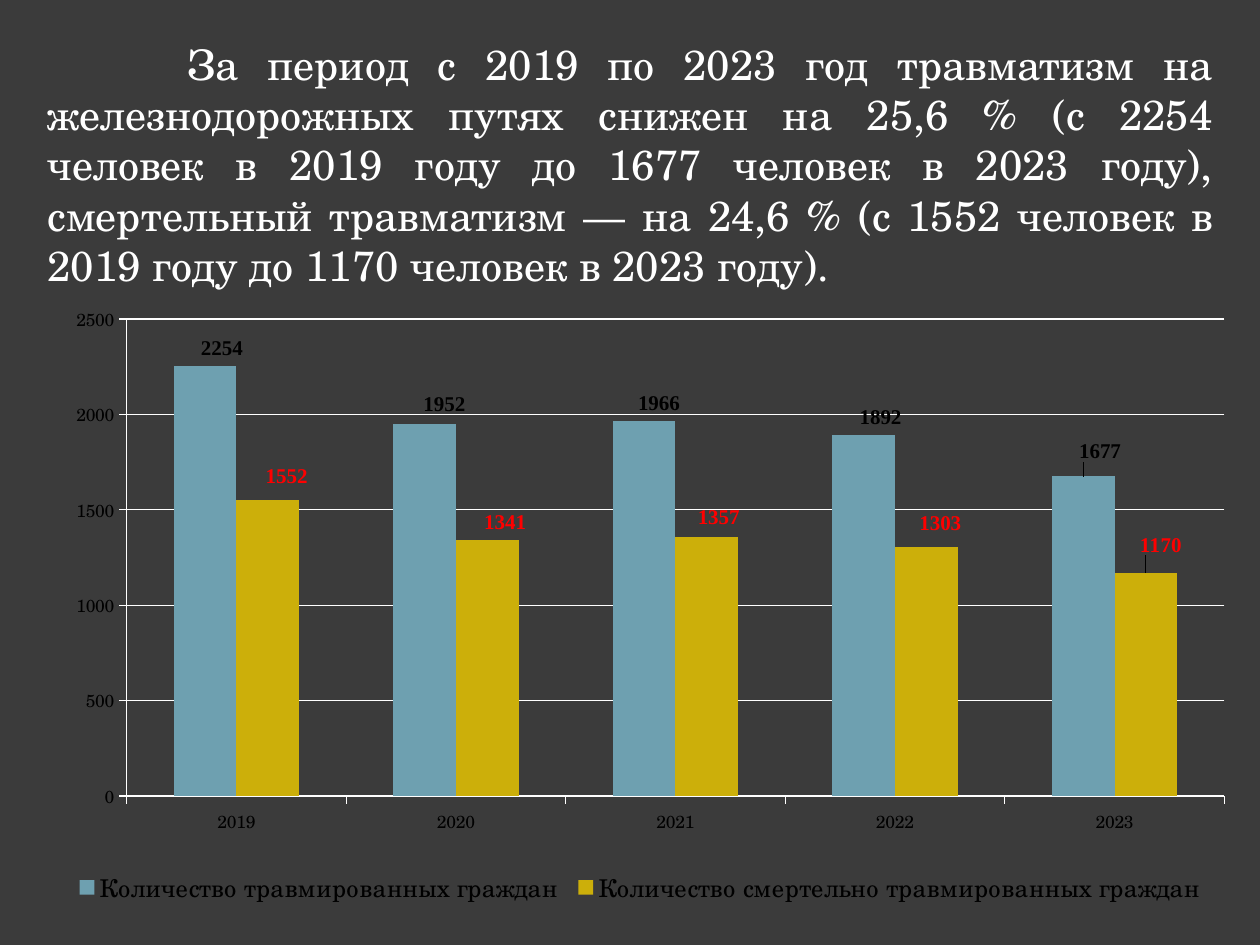
from dataclasses import dataclass

from lxml.etree import SubElement
from pptx import Presentation
from pptx.chart.data import CategoryChartData
from pptx.dml.color import RGBColor
from pptx.enum.chart import XL_CHART_TYPE as ChartType
from pptx.enum.chart import XL_LABEL_POSITION as LabelPos
from pptx.enum.chart import XL_LEGEND_POSITION as LegendPos
from pptx.enum.chart import XL_TICK_MARK as Tick
from pptx.enum.text import PP_ALIGN as Align
from pptx.oxml import parse_xml
from pptx.oxml.ns import nsdecls, qn
from pptx.util import Emu, Pt

PX_PER_INCH = 126
SERIF, LABEL_FONT = "TeX Gyre Schola", "Times New Roman"
WHITE, BLACK, RED, GREY = "FFFFFF", "000000", "FF0000", "3B3B3B"
CHART_W, CHART_H = 1181, 638


@dataclass
class Series:
    name: str
    values: list[int]
    fill: str
    label_color: str
    label_shifts: list[tuple[int, int]]  # px from the default place


YEARS = ["2019", "2020", "2021", "2022", "2023"]
SERIES = [
    Series("Количество травмированных граждан", [2254, 1952, 1966, 1892, 1677],
           "6EA0B0", BLACK, [(17, -2), (20, -3), (15, -2), (17, -2), (17, -9)]),
    Series("Количество смертельно травмированных граждан", [1552, 1341, 1357, 1303, 1170],
           "CCAF0A", RED, [(19, -8), (18, -2), (12, -4), (14, -8), (15, -12)]),
]
SUMMARY = ("За период с 2019 по 2023 год травматизм на железнодорожных путях снижен "
           "на 25,6 % (с 2254 человек в 2019 году до 1677 человек в 2023 году), "
           "смертельный травматизм — на 24,6 % (с 1552 человек в 2019 году "
           "до 1170 человек в 2023 году).")


def px(n: int) -> Emu:
    return Emu(round(n * 914400 / PX_PER_INCH))


def rgb(color: str) -> RGBColor:
    return RGBColor.from_string(color)


def set_font(font, size: int, color: str, name: str = SERIF, bold: bool = False) -> None:
    font.size, font.name, font.bold = Pt(size), name, bold
    font.color.rgb = rgb(color)


def add_text(slide, text: str, x: int, y: int, w: int, h: int, *, size: int,
             color: str, align=Align.LEFT, indent: int = 0) -> None:
    tf = slide.shapes.add_textbox(px(x), px(y), px(w), px(h)).text_frame
    tf.word_wrap = True
    p = tf.paragraphs[0]
    p.alignment = align
    p._p.get_or_add_pPr().set("indent", str(px(indent)))
    r = p.add_run()
    r.text = text
    set_font(r.font, size, color)


def set_layout(parent, index: int, **values) -> None:
    """Give a chart part a manual layout, as the child at the given index."""
    for old in parent.findall(qn("c:layout")):
        parent.remove(old)
    layout = parse_xml(f"<c:layout {nsdecls('c')}><c:manualLayout/></c:layout>")
    for tag, value in values.items():
        SubElement(layout[0], qn(f"c:{tag}")).set("val", str(value))
    parent.insert(index, layout)


def style_axis(axis) -> None:
    axis.major_tick_mark, axis.minor_tick_mark = Tick.OUTSIDE, Tick.NONE
    axis.format.line.color.rgb = rgb(WHITE)
    axis.format.line.width = Pt(0.75)
    set_font(axis.tick_labels.font, 10, BLACK)


def style_series(ser, spec: Series) -> None:
    ser.format.fill.solid()
    ser.format.fill.fore_color.rgb = rgb(spec.fill)
    ser.invert_if_negative = False
    labels = ser.data_labels
    labels.show_value = True
    labels.position = LabelPos.OUTSIDE_END
    set_font(labels.font, 12, spec.label_color, LABEL_FONT, True)
    for i in range(len(spec.values)):
        label = ser.points[i].data_label
        set_font(label.font, 12, spec.label_color, LABEL_FONT, True)
        label.position = LabelPos.OUTSIDE_END
    for dlbl, (dx, dy) in zip(ser._element.iter(qn("c:dLbl")), spec.label_shifts):
        set_layout(dlbl, 1, x=round(dx / CHART_W, 4), y=round(dy / CHART_H, 4))


def add_injury_chart(slide, x: int, y: int) -> None:
    data = CategoryChartData()
    data.categories = YEARS
    for spec in SERIES:
        data.add_series(spec.name, spec.values)
    chart = slide.shapes.add_chart(ChartType.COLUMN_CLUSTERED, px(x), px(y),
                                   px(CHART_W), px(CHART_H), data).chart
    chart.has_title = False
    set_font(chart.font, 10, BLACK)

    # Columns
    plot = chart.plots[0]
    plot.gap_width, plot.overlap, plot.vary_by_categories = 150, 0, False
    for ser, spec in zip(plot.series, SERIES):
        style_series(ser, spec)
    set_layout(chart._chartSpace.chart.plotArea, 0, layoutTarget="inner",
               xMode="edge", yMode="edge", x=0.07, y=0.044, w=0.93, h=0.748)

    # Axes and gridlines
    style_axis(chart.category_axis)
    value_axis = chart.value_axis
    style_axis(value_axis)
    value_axis.minimum_scale, value_axis.maximum_scale = 0, 2500
    value_axis.major_unit = 500
    value_axis.has_major_gridlines = True
    grid = value_axis.major_gridlines.format.line
    grid.color.rgb, grid.width = rgb(WHITE), Pt(0.75)

    # Legend in one row under the columns
    chart.has_legend = True
    legend = chart.legend
    legend.position = LegendPos.RIGHT
    legend.include_in_layout = False
    set_font(legend.font, 14, BLACK)
    set_layout(legend._element, 1, xMode="edge", yMode="edge",
               x=0.02, y=0.9, w=0.97, h=0.07)


def main() -> None:
    prs = Presentation()
    prs.slide_width, prs.slide_height = px(1260), px(945)
    s = prs.slides.add_slide(prs.slide_layouts[6])
    s.background.fill.solid()
    s.background.fill.fore_color.rgb = rgb(GREY)
    add_text(s, SUMMARY, 35, 32, 1190, 267, size=24, color=WHITE,
             align=Align.JUSTIFY, indent=140)
    add_injury_chart(s, 44, 291)
    prs.save("out.pptx")


if __name__ == "__main__":
    main()
